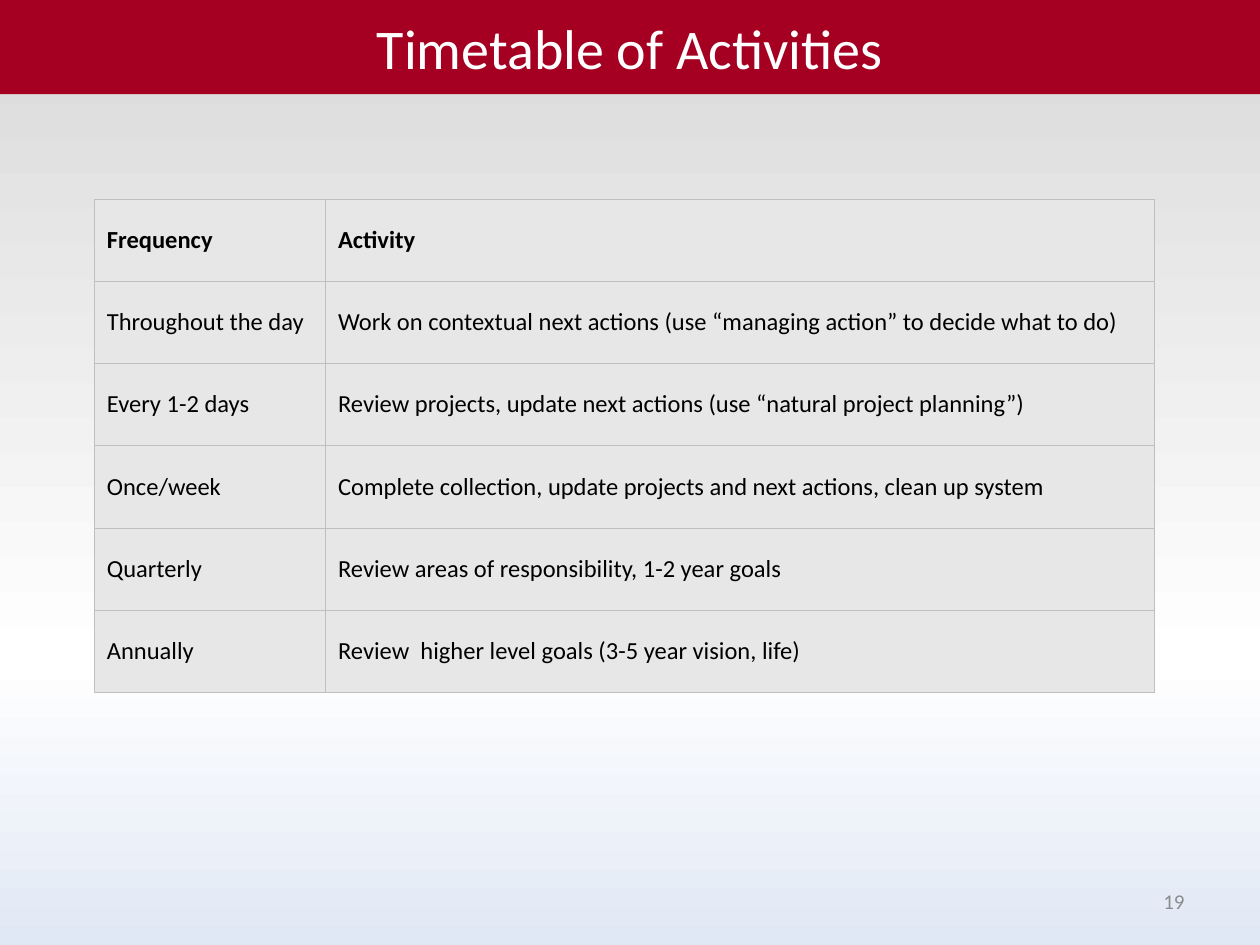
from copy import deepcopy

from pptx import Presentation
from pptx.dml.color import RGBColor
from pptx.enum.text import MSO_ANCHOR, PP_ALIGN
from pptx.oxml.ns import qn
from pptx.oxml.xmlchemy import OxmlElement
from pptx.util import Cm, Pt

MIDDLE = MSO_ANCHOR.MIDDLE
LEFT, CENTER, RIGHT = PP_ALIGN.LEFT, PP_ALIGN.CENTER, PP_ALIGN.RIGHT

FONT = "Calibri"
CRIMSON = RGBColor(0xA5, 0x00, 0x21)
WHITE = RGBColor(0xFF, 0xFF, 0xFF)
BLACK = RGBColor(0x00, 0x00, 0x00)
NUMBER_GRAY = RGBColor(0x8C, 0x8C, 0x8C)
CELL_GRAY = RGBColor(0xE7, 0xE7, 0xE7)
BORDER_GRAY = RGBColor(0xBF, 0xBF, 0xBF)
BACKGROUND_STOPS = [
    (0, RGBColor(0xD9, 0xD9, 0xD9)),
    (0.7, WHITE),
    (1, RGBColor(0xE1, 0xE8, 0xF5)),
]

PAGE_WIDTH, PAGE_HEIGHT = Cm(25.4), Cm(19.05)
COLUMN_SHARES = (0.218, 0.782)
TIMETABLE = [
    ("Frequency", "Activity"),
    ("Throughout the day",
     "Work on contextual next actions (use “managing action” to decide what to do)"),
    ("Every 1-2 days",
     "Review projects, update next actions (use “natural project planning”)"),
    ("Once/week",
     "Complete collection, update projects and next actions, clean up system"),
    ("Quarterly", "Review areas of responsibility, 1-2 year goals"),
    ("Annually", "Review  higher level goals (3-5 year vision, life)"),
]


def write(frame, text, size, color, align, bold=False):
    """Fill a text frame with one formatted paragraph."""
    frame.text = text
    para = frame.paragraphs[0]
    para.alignment = align
    para.font.name = FONT
    para.font.size = Pt(size)
    para.font.bold = bold
    para.font.color.rgb = color


def paint_background(page):
    fill = page.background.fill
    fill.gradient()
    fill.gradient_angle = 270
    # A new gradient has two stops; add the third
    stop_list = next(page.element.iter(qn("a:gsLst")))
    stop_list.append(deepcopy(stop_list[-1]))
    for stop, (position, color) in zip(fill.gradient_stops, BACKGROUND_STOPS):
        stop.position = position
        stop.color.rgb = color


def add_title_band(page, left, top, width, height):
    band = page.shapes.title
    band.left, band.top, band.width, band.height = left, top, width, height
    band.fill.solid()
    band.fill.fore_color.rgb = CRIMSON
    band.text_frame.vertical_anchor = MIDDLE
    write(band.text_frame, "Timetable of Activities", 32, WHITE, CENTER)


def add_borders(cell):
    properties = cell._tc.get_or_add_tcPr()
    for index, side in enumerate(("a:lnL", "a:lnR", "a:lnT", "a:lnB")):
        line = OxmlElement(side)
        line.set("w", str(Pt(0.5)))
        fill = OxmlElement("a:solidFill")
        color = OxmlElement("a:srgbClr")
        color.set("val", str(BORDER_GRAY))
        fill.append(color)
        line.append(fill)
        properties.insert(index, line)


def add_timetable(page, left, top, width, height):
    table = page.shapes.add_table(
        len(TIMETABLE), len(COLUMN_SHARES), left, top, width, height).table
    table.first_row = table.horz_banding = False
    for column, share in zip(table.columns, COLUMN_SHARES):
        column.width = int(width * share)
    for row_index, row in enumerate(TIMETABLE):
        for column_index, text in enumerate(row):
            cell = table.cell(row_index, column_index)
            cell.vertical_anchor = MIDDLE
            cell.fill.solid()
            cell.fill.fore_color.rgb = CELL_GRAY
            add_borders(cell)
            write(cell.text_frame, text, 14, BLACK, LEFT, bold=row_index == 0)


def add_page_number(page, left, top, width, height):
    box = page.shapes.add_textbox(left, top, width, height)
    box.text_frame.word_wrap = True
    box.text_frame.vertical_anchor = MIDDLE
    write(box.text_frame, "19", 12, NUMBER_GRAY, RIGHT)


def main():
    deck = Presentation()
    deck.slide_width, deck.slide_height = PAGE_WIDTH, PAGE_HEIGHT
    page = deck.slides.add_slide(deck.slide_layouts.get_by_name("Title Only"))

    paint_background(page)
    add_title_band(page, 0, 0, PAGE_WIDTH, Cm(1.9))
    add_timetable(page, Cm(1.9), Cm(4.01), Cm(21.38), Cm(9.95))
    add_page_number(page, Cm(18.2), Cm(17.66), Cm(5.93), Cm(1.01))

    deck.save("out.pptx")


if __name__ == "__main__":
    main()
